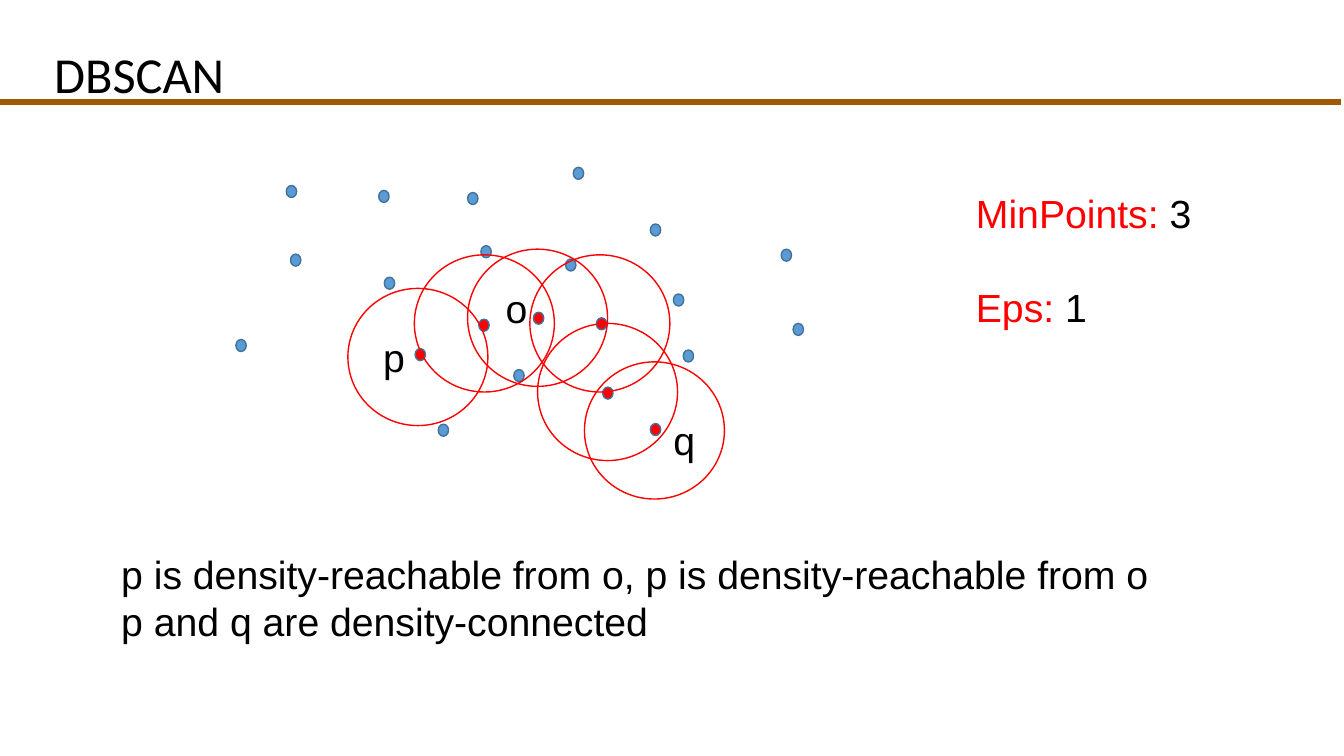
"""Build the DBSCAN density-reachability slide."""
from dataclasses import dataclass

from lxml.etree import SubElement
from pptx import Presentation
from pptx.dml.color import RGBColor
from pptx.enum.shapes import MSO_CONNECTOR, MSO_SHAPE
from pptx.enum.text import MSO_ANCHOR, PP_ALIGN
from pptx.oxml.ns import qn
from pptx.util import Pt


@dataclass(frozen=True)
class Theme:
    """Colours, fonts and type sizes of the slide."""
    ink: RGBColor = RGBColor(0x00, 0x00, 0x00)
    accent: RGBColor = RGBColor(0xFF, 0x00, 0x00)
    point: RGBColor = RGBColor(0x5B, 0x9B, 0xD5)
    point_edge: RGBColor = RGBColor(0x42, 0x71, 0x9B)
    rule: RGBColor = RGBColor(0x9F, 0x59, 0x00)
    title_font: str = "Calibri"
    body_font: str = "Arial"
    title_size: float = 36
    body_size: float = 28
    body_leading: float = 33.6


THEME = Theme()
POINT_SIZE = (7.4, 8.6)
NEIGHBOURHOOD_SIZE = (100, 98)

OTHER_POINTS = [
    (313, 303), (367, 264), (274.5, 198), (464.5, 160),
    (334, 137.5), (207.5, 181.5), (488, 250), (481, 210),
    (566.5, 231), (558, 178), (270.5, 136), (404, 185),
    (168.5, 242.5), (343.5, 175.5), (204.5, 132.5), (409.5, 119.5),
]
CHAIN_POINTS = [
    (296.5, 249), (342, 228), (381, 223),
    (426, 227), (430.5, 276.5), (464.5, 302.5),
]
NEIGHBOURHOODS = [
    (248.5, 206), (296, 182), (334, 178),
    (378.5, 182), (384, 231), (417.5, 258.5),
]
POINT_LABELS = [
    ("p", (266.5, 234.5, 26, 41)),
    ("o", (354, 199.5, 26, 41)),
    ("q", (474, 294, 39, 41)),
]
CONCLUSIONS = [
    "p is density-reachable from o, p is density-reachable from o",
    "p and q are density-connected",
]
PARAMETERS = [("MinPoints: ", "3"), ("Eps: ", "1")]


def add_circle(slide, corner, size, edge, fill=None):
    """Draw a round marker, hollow when no fill is given."""
    circle = slide.shapes.add_shape(
        MSO_SHAPE.FLOWCHART_CONNECTOR, *map(Pt, corner + size))
    circle.shadow.inherit = False
    if fill is None:
        circle.fill.background()
    else:
        circle.fill.solid()
        circle.fill.fore_color.rgb = fill
    circle.line.color.rgb = edge
    circle.line.width = Pt(1)


def style_font(font, name, size, color):
    """Set the typeface, size and colour of a font."""
    font.name = name
    font.size = Pt(size)
    font.color.rgb = color


def add_text(slide, box, lines, gap=0):
    """Add a text box whose lines are lists of (text, colour) parts."""
    frame = slide.shapes.add_textbox(*map(Pt, box)).text_frame
    frame.word_wrap = True
    for index, parts in enumerate(lines):
        paragraph = frame.add_paragraph() if index else frame.paragraphs[0]
        paragraph.line_spacing = Pt(THEME.body_leading)
        paragraph.space_before = Pt(gap if index else 0)
        style_font(paragraph.font, THEME.body_font, THEME.body_size, THEME.ink)
        for text, color in parts:
            run = paragraph.add_run()
            run.text = text
            if color != THEME.ink:
                run.font.color.rgb = color


def set_title(slide, text):
    """Place and format the slide title."""
    title = slide.shapes.title
    title.left, title.top, title.width, title.height = map(
        Pt, (31.5, 21.5, 894, 60))
    frame = title.text_frame
    frame.text = text
    frame.vertical_anchor = MSO_ANCHOR.BOTTOM
    frame.margin_left = frame.margin_right = Pt(7.2)
    frame.margin_top = frame.margin_bottom = Pt(7.2)
    heading = frame.paragraphs[0]
    heading.alignment = PP_ALIGN.LEFT
    style_font(heading.font, THEME.title_font, THEME.title_size, THEME.ink)


def add_title_rule(slide):
    """Draw the rule under the title."""
    rule = slide.shapes.add_connector(
        MSO_CONNECTOR.STRAIGHT, Pt(0), Pt(73), Pt(958), Pt(73))
    rule.line.color.rgb = THEME.rule
    rule.line.width = Pt(4.5)
    SubElement(rule._element.spPr, qn("a:effectLst"))


def main():
    """Compose the slide and save it."""
    deck = Presentation()
    deck.slide_width, deck.slide_height = Pt(960), Pt(540)
    slide = deck.slides.add_slide(deck.slide_layouts[5])

    set_title(slide, "DBSCAN")
    add_title_rule(slide)
    for corner in OTHER_POINTS:
        add_circle(slide, corner, POINT_SIZE, THEME.point_edge, THEME.point)
    for corner in CHAIN_POINTS:
        add_circle(slide, corner, POINT_SIZE, THEME.point_edge, THEME.accent)
    for corner in NEIGHBOURHOODS:
        add_circle(slide, corner, NEIGHBOURHOOD_SIZE, THEME.accent)
    for label, box in POINT_LABELS:
        add_text(slide, box, [[(label, THEME.ink)]])
    add_text(slide, (79.5, 389.5, 762, 75),
             [[(conclusion, THEME.ink)] for conclusion in CONCLUSIONS])
    add_text(slide, (690, 132, 189.5, 108.5),
             [[(name, THEME.accent), (value, THEME.ink)]
              for name, value in PARAMETERS],
             gap=THEME.body_leading)

    deck.save("out.pptx")


if __name__ == "__main__":
    main()
